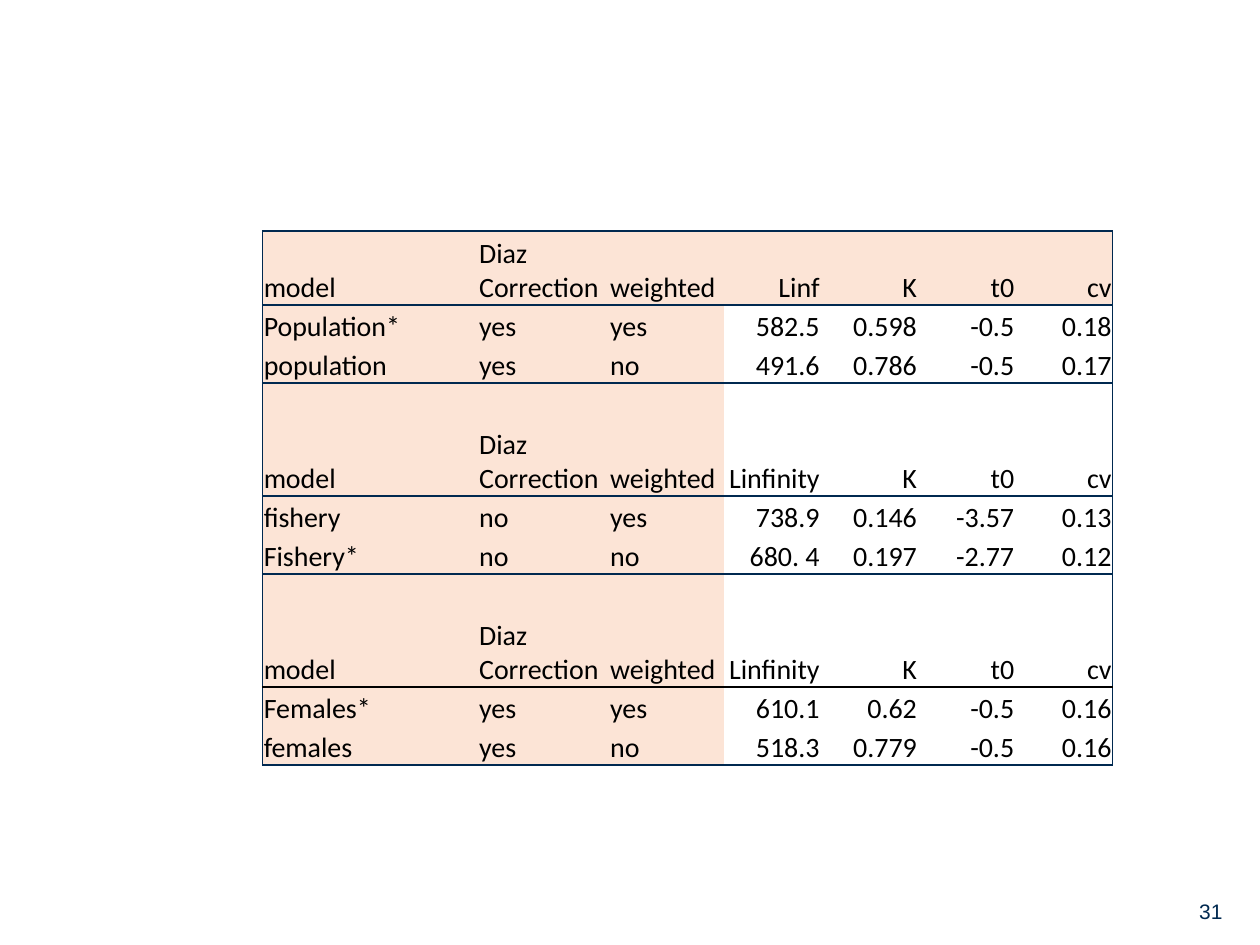
from lxml.etree import SubElement
from pptx import Presentation
from pptx.dml.color import RGBColor
from pptx.enum.text import MSO_ANCHOR, PP_ALIGN
from pptx.oxml.ns import qn
from pptx.util import Pt

NAVY = RGBColor(0x00, 0x29, 0x50)
BLACK = RGBColor(0x00, 0x00, 0x00)
PEACH = RGBColor(0xFC, 0xE4, 0xD6)
NO_STYLE = "{2D5ABB26-0587-4C30-8999-92F81FD0307C}"

COLUMN_WIDTHS = [123.1, 74.9, 65.5] + [55.6] * 4
HEADER_HEIGHT, ROW_HEIGHT = 42.3, 22.3
LABEL_COLUMNS = 3

SPACER = [""] * 7
HEADER = ["model", "Diaz Correction", "weighted", "Linfinity", "K", "t0", "cv"]
GROWTH_FITS = [
    ["model", "Diaz Correction", "weighted", "Linf", "K", "t0", "cv"],
    ["Population*", "yes", "yes", "582.5", "0.598", "-0.5", "0.18"],
    ["population", "yes", "no", "491.6", "0.786", "-0.5", "0.17"],
    SPACER,
    HEADER,
    ["fishery", "no", "yes", "738.9", "0.146", "-3.57", "0.13"],
    ["Fishery*", "no", "no", "680. 4", "0.197", "-2.77", "0.12"],
    SPACER,
    HEADER,
    ["Females*", "yes", "yes", "610.1", "0.62", "-0.5", "0.16"],
    ["females", "yes", "no", "518.3", "0.779", "-0.5", "0.16"],
]
LAST_ROW, LAST_COLUMN = len(GROWTH_FITS) - 1, len(HEADER) - 1
LAST_HEADER_ROW = 8


def add_border(cell, side, color):
    """Draw a 1 pt line on one side (L, R, T or B); call in that order, before any fill."""
    line = SubElement(cell._tc.get_or_add_tcPr(), qn(f"a:ln{side}"), w=str(Pt(1)))
    solid = SubElement(line, qn("a:solidFill"))
    SubElement(solid, qn("a:srgbClr"), val=str(color))


def add_run(paragraph, text, font_name, size, color):
    run = paragraph.add_run()
    run.text = text
    run.font.name = font_name
    run.font.size = Pt(size)
    run.font.color.rgb = color


prs = Presentation()
prs.slide_width, prs.slide_height = Pt(720), Pt(540)
slide = prs.slides.add_slide(prs.slide_layouts[6])

# Slide number
page_number = slide.shapes.add_textbox(Pt(678.2), Pt(509.8), Pt(59.8), Pt(21.6))
page_number.text_frame.word_wrap = True
add_run(page_number.text_frame.paragraphs[0], "31", "Arial", 12, NAVY)

# Growth model table
fits_frame = slide.shapes.add_table(
    len(GROWTH_FITS), len(HEADER), Pt(150), Pt(132),
    Pt(sum(COLUMN_WIDTHS)), Pt(3 * HEADER_HEIGHT + 8 * ROW_HEIGHT))
fits = fits_frame.table
fits.first_row = fits.horz_banding = False
fits._tbl.tblPr.find(qn("a:tableStyleId")).text = NO_STYLE

for column, width in zip(fits.columns, COLUMN_WIDTHS):
    column.width = Pt(width)

for r, values in enumerate(GROWTH_FITS):
    is_header = values[0] == "model"
    fits.rows[r].height = Pt(HEADER_HEIGHT if is_header else ROW_HEIGHT)
    # A rule closes every header and every pair of fits
    has_rule = r % 2 == 0
    for c, value in enumerate(values):
        cell = fits.cell(r, c)
        cell.margin_left = cell.margin_right = cell.margin_top = Pt(0.72)
        cell.margin_bottom = Pt(0)
        cell.vertical_anchor = MSO_ANCHOR.BOTTOM

        if c == 0:
            add_border(cell, "L", NAVY)
        if c == LAST_COLUMN:
            add_border(cell, "R", NAVY)
        if r == 0:
            add_border(cell, "T", NAVY)
        if has_rule:
            add_border(cell, "B", BLACK if r == LAST_HEADER_ROW else NAVY)

        if r == 0 or c < LABEL_COLUMNS:
            cell.fill.solid()
            cell.fill.fore_color.rgb = PEACH
        else:
            cell.fill.background()

        paragraph = cell.text_frame.paragraphs[0]
        paragraph.alignment = PP_ALIGN.LEFT if c < LABEL_COLUMNS else PP_ALIGN.RIGHT
        add_run(paragraph, value, "Calibri", 16, BLACK)

prs.save("out.pptx")
